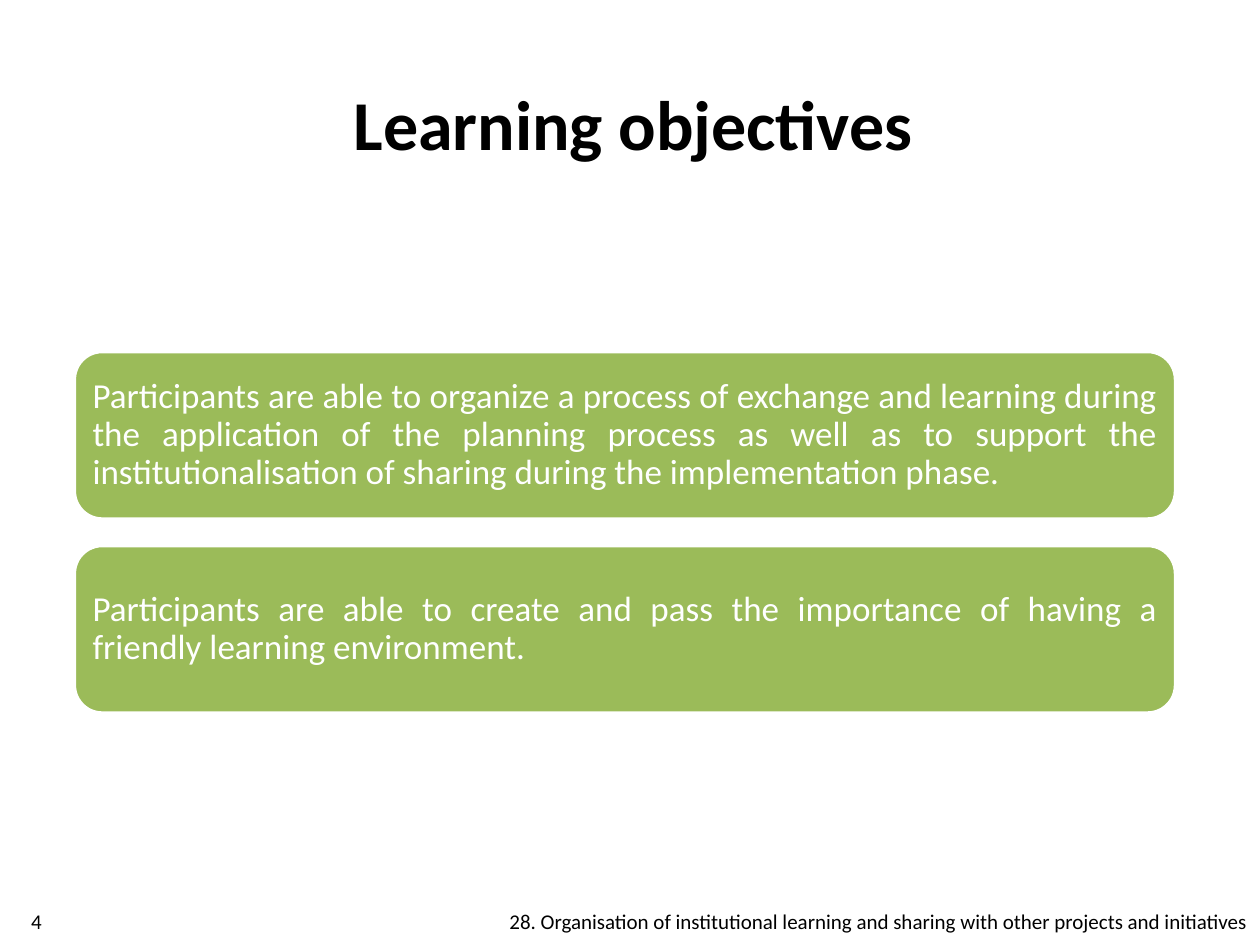
from dataclasses import dataclass

from pptx import Presentation
from pptx.dml.color import RGBColor
from pptx.enum.shapes import MSO_SHAPE
from pptx.enum.text import MSO_ANCHOR, PP_ALIGN
from pptx.util import Inches, Pt


@dataclass(frozen=True)
class Theme:
    font: str = "Calibri"
    black: RGBColor = RGBColor(0, 0, 0)
    white: RGBColor = RGBColor(255, 255, 255)
    green: RGBColor = RGBColor(0x9B, 0xBB, 0x59)
    title: int = 40
    body: int = 20
    small: int = 12


THEME = Theme()
GOALS = (
    "Participants are able to organize a process of exchange and learning "
    "during the application of the planning process as well as to support "
    "the institutionalisation of sharing during the implementation phase.",
    "Participants are able to create and pass the importance of having a "
    "friendly learning environment.",
)
TOP, PITCH = 2.79, 1.54


def place(shape, left, top, width, height):
    shape.left, shape.top = Inches(left), Inches(top)
    shape.width, shape.height = Inches(width), Inches(height)


def write(shape, text, size, color, align, bold=False):
    frame = shape.text_frame
    frame.word_wrap = True
    frame.vertical_anchor = MSO_ANCHOR.MIDDLE
    para = frame.paragraphs[0]
    para.alignment = align
    run = para.add_run()
    run.text = text
    run.font.name = THEME.font
    run.font.size = Pt(size)
    run.font.bold = bold
    run.font.color.rgb = color
    return para


def add_title(slide, text):
    title = slide.shapes.title
    place(title, 1.42, 0.38, 7.21, 1.18)
    write(title, text, THEME.title, THEME.black, PP_ALIGN.CENTER, True)


def add_goal(slide, top, text):
    card = slide.shapes.add_shape(
        MSO_SHAPE.ROUNDED_RECTANGLE,
        Inches(0.59), Inches(top), Inches(8.74), Inches(1.33))
    card.shadow.inherit = False
    card.fill.solid()
    card.fill.fore_color.rgb = THEME.green
    card.line.color.rgb = THEME.white
    card.line.width = Pt(2)
    frame = card.text_frame
    frame.margin_left = frame.margin_right = Inches(0.08)
    frame.margin_top = frame.margin_bottom = Inches(0.08)
    para = write(card, text, THEME.body, THEME.white, PP_ALIGN.JUSTIFY)
    para.line_spacing = 0.9


def add_note(slide, left, width, text, align):
    box = slide.shapes.add_textbox(
        Inches(left), Inches(7.12), Inches(width), Inches(0.38))
    write(box, text, THEME.small, THEME.black, align)


def main():
    deck = Presentation()
    deck.slide_width, deck.slide_height = Inches(10), Inches(7.5)
    slide = deck.slides.add_slide(deck.slide_layouts[5])
    add_title(slide, "Learning objectives")
    for i, goal in enumerate(GOALS):
        add_goal(slide, TOP + i * PITCH, goal)
    add_note(slide, 1.38, 8.62,
             "28. Organisation of institutional learning and sharing "
             "with other projects and initiatives", PP_ALIGN.RIGHT)
    add_note(slide, -0.01, 0.6, "4", PP_ALIGN.CENTER)
    deck.save("out.pptx")


if __name__ == "__main__":
    main()
